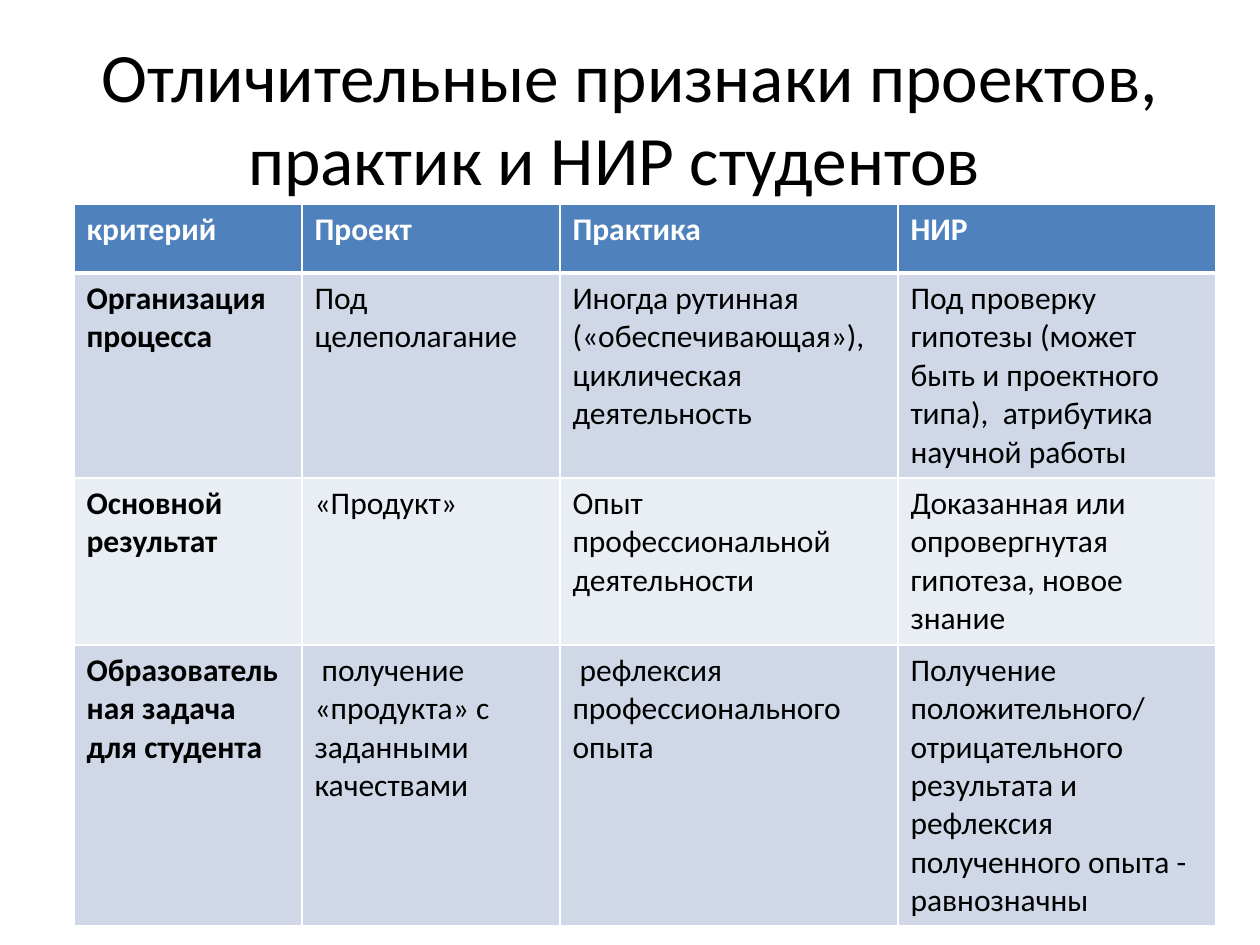
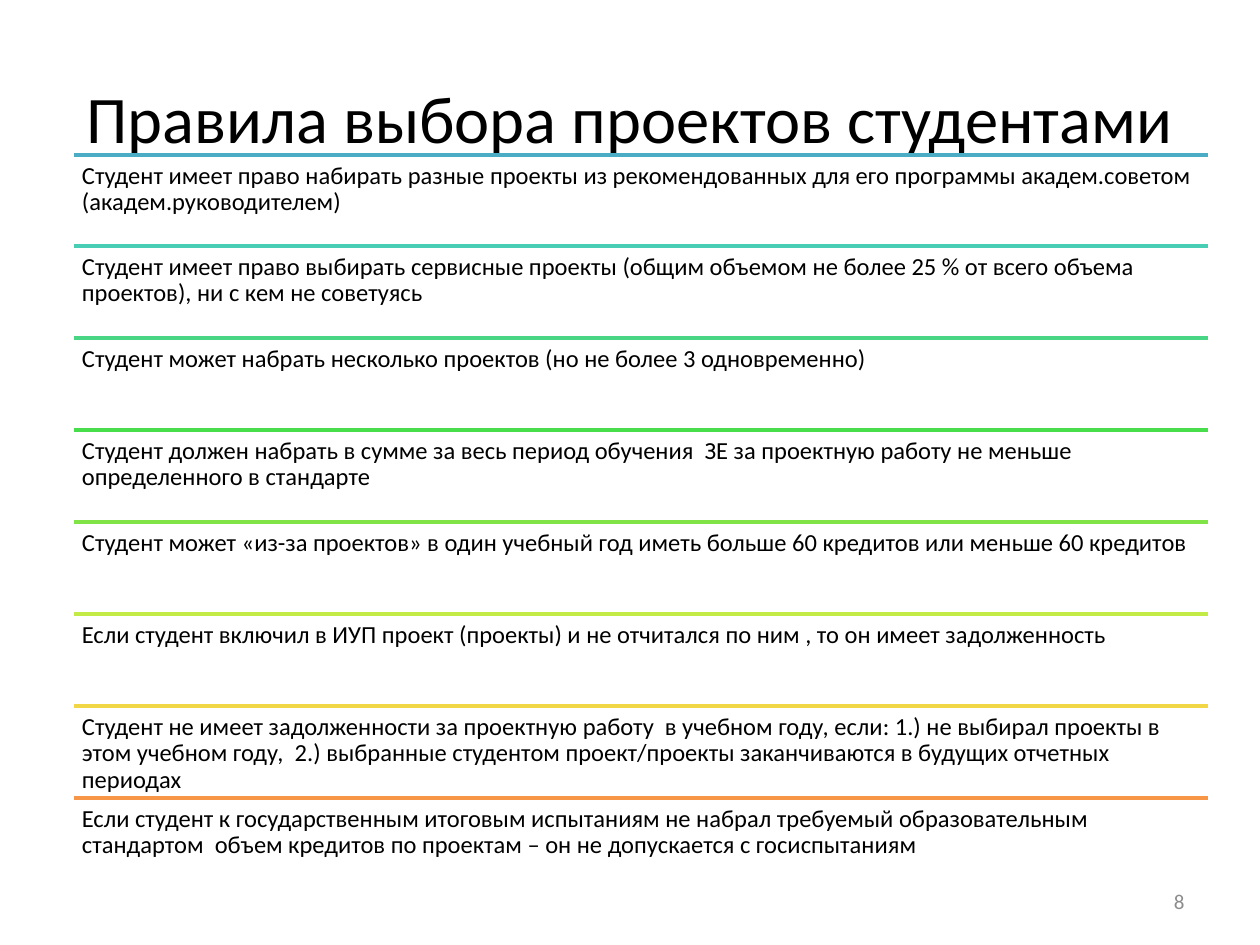
from dataclasses import dataclass

from lxml.etree import SubElement
from pptx import Presentation
from pptx.dml.color import RGBColor
from pptx.enum.shapes import MSO_CONNECTOR
from pptx.enum.text import MSO_ANCHOR, PP_ALIGN
from pptx.oxml.ns import qn
from pptx.util import Emu, Pt

PX = 914400 / 126
FONT = "Calibri"
COLORS = {
    "text": "000000",
    "white": "FFFFFF",
    "number": "8C8C8C",
    "header": "4F81BD",
    "band_dark": "D0D8E8",
    "band_light": "E9EDF4",
    "blue": "4BACC6",
    "teal": "49CEB6",
    "mint": "48D684",
    "green": "47DD4B",
    "lime": "80E446",
    "chartreuse": "C3EB46",
    "yellow": "F1D746",
    "orange": "F79646",
}


@dataclass(frozen=True)
class Area:
    left: int
    top: int
    width: int
    height: int

    def emu(self) -> tuple:
        return tuple(px(v) for v in (self.left, self.top, self.width, self.height))


@dataclass(frozen=True)
class TextStyle:
    size: float
    color: str = "text"
    bold: bool = False
    align: PP_ALIGN = PP_ALIGN.LEFT
    anchor: MSO_ANCHOR = MSO_ANCHOR.TOP
    line_spacing: float = 1.0
    space_after: float = 0


@dataclass(frozen=True)
class Rule:
    color: str
    text: str


def px(value: int) -> Emu:
    return Emu(round(value * PX))


def rgb(name: str) -> RGBColor:
    return RGBColor.from_string(COLORS[name])


# Shared geometry and styles
TITLE_AREA = Area(63, 38, 1134, 157)
NUMBER_AREA = Area(903, 876, 294, 50)
NUMBER_STYLE = TextStyle(12, "number", align=PP_ALIGN.RIGHT, anchor=MSO_ANCHOR.MIDDLE)
RULE_STYLE = TextStyle(14, line_spacing=0.9, space_after=5)
CONTENT_LEFT = 74

# Comparison table
TABLE_TOP = 204
COLUMN_WIDTHS = [228, 258, 338, 318]
ROW_HEIGHTS = [69, 205, 167, 281]
COMPARISON = [
    ["критерий", "Проект", "Практика", "НИР"],
    [
        "Организация процесса",
        "Под целеполагание",
        "Иногда рутинная («обеспечивающая»), циклическая деятельность",
        "Под проверку гипотезы (может быть и проектного типа),  атрибутика научной работы",
    ],
    [
        "Основной результат",
        "«Продукт»",
        "Опыт профессиональной деятельности",
        "Доказанная или опровергнутая гипотеза, новое знание",
    ],
    [
        "Образовательная задача для студента",
        " получение «продукта» с заданными качествами",
        " рефлексия профессионального опыта",
        "Получение положительного/ отрицательного результата и рефлексия "
        "полученного опыта - равнозначны",
    ],
]

# Project choice rules
RULES_TOP = 155
RULES_SPAN = 643
RULE_WIDTH = 1134
RULE_HEIGHT = 92
RULE_INSET = 8
RULES = [
    Rule("blue", "Студент имеет право набирать разные проекты из рекомендованных для его "
                 "программы академ.советом (академ.руководителем)"),
    Rule("teal", "Студент имеет право выбирать сервисные проекты (общим объемом не более "
                 "25 % от всего объема проектов), ни с кем не советуясь"),
    Rule("mint", "Студент может набрать несколько проектов (но не более 3 одновременно)"),
    Rule("green", "Студент должен набрать в сумме за весь период обучения  ЗЕ за проектную "
                  "работу не меньше определенного в стандарте"),
    Rule("lime", "Студент может «из-за проектов» в один учебный год иметь больше 60 кредитов "
                 "или меньше 60 кредитов"),
    Rule("chartreuse", "Если студент включил в ИУП проект (проекты) и не отчитался по ним , "
                       "то он имеет задолженность"),
    Rule("yellow", "Студент не имеет задолженности за проектную работу  в учебном году, если: "
                   "1.) не выбирал проекты в этом учебном году,  2.) выбранные студентом "
                   "проект/проекты заканчиваются в будущих отчетных периодах"),
    Rule("orange", "Если студент к государственным итоговым испытаниям не набрал требуемый "
                   "образовательным стандартом  объем кредитов по проектам – он не "
                   "допускается с госиспытаниям"),
]


def write(frame, text: str, style: TextStyle) -> None:
    frame.word_wrap = True
    para = frame.paragraphs[0]
    para.alignment = style.align
    para.line_spacing = style.line_spacing
    para.space_after = Pt(style.space_after)
    span = para.add_run()
    span.text = text
    span.font.name = FONT
    span.font.size = Pt(style.size)
    span.font.bold = style.bold
    span.font.color.rgb = rgb(style.color)


def add_text(page, area: Area, text: str, style: TextStyle, inset: int | None = None) -> None:
    frame = page.shapes.add_textbox(*area.emu()).text_frame
    frame.vertical_anchor = style.anchor
    if inset is not None:
        frame.margin_left = frame.margin_right = px(inset)
        frame.margin_top = frame.margin_bottom = px(inset)
    write(frame, text, style)


def add_title(page, text: str, size: float) -> None:
    style = TextStyle(size, align=PP_ALIGN.CENTER, anchor=MSO_ANCHOR.MIDDLE)
    add_text(page, TITLE_AREA, text, style)


def set_borders(cell, top: int, bottom: int) -> None:
    properties = cell._tc.get_or_add_tcPr()
    for side, width in (("L", 1), ("R", 1), ("T", top), ("B", bottom)):
        line = SubElement(properties, qn(f"a:ln{side}"), w=str(Pt(width)))
        fill = SubElement(line, qn("a:solidFill"))
        SubElement(fill, qn("a:srgbClr"), val=COLORS["white"])


def add_comparison(page) -> None:
    area = Area(CONTENT_LEFT, TABLE_TOP, sum(COLUMN_WIDTHS), sum(ROW_HEIGHTS))
    table = page.shapes.add_table(len(ROW_HEIGHTS), len(COLUMN_WIDTHS), *area.emu()).table
    for column, width in zip(table.columns, COLUMN_WIDTHS):
        column.width = px(width)
    for row, height in zip(table.rows, ROW_HEIGHTS):
        row.height = px(height)
    for r, texts in enumerate(COMPARISON):
        header = r == 0
        fill = "header" if header else "band_dark" if r % 2 else "band_light"
        for c, text in enumerate(texts):
            cell = table.cell(r, c)
            set_borders(cell, top=3 if r == 1 else 1, bottom=3 if header else 1)
            cell.fill.solid()
            cell.fill.fore_color.rgb = rgb(fill)
            style = TextStyle(18, "white" if header else "text", bold=header or c == 0)
            write(cell.text_frame, text, style)


def add_rule(page, rule: Rule, top: int) -> None:
    left, right = px(CONTENT_LEFT), px(CONTENT_LEFT + RULE_WIDTH)
    line = page.shapes.add_connector(MSO_CONNECTOR.STRAIGHT, left, px(top), right, px(top))
    line.line.color.rgb = rgb(rule.color)
    line.line.width = Pt(2)
    SubElement(line._element.spPr, qn("a:effectLst"))
    area = Area(CONTENT_LEFT, top, RULE_WIDTH, RULE_HEIGHT)
    add_text(page, area, rule.text, RULE_STYLE, RULE_INSET)


def main() -> None:
    deck = Presentation()
    deck.slide_width, deck.slide_height = px(1260), px(945)
    blank = deck.slide_layouts[6]

    # Slide 1: comparison of projects, practice and research
    page = deck.slides.add_slide(blank)
    add_title(page, "Отличительные признаки проектов, практик и НИР студентов  ", 39.6)
    add_comparison(page)

    # Slide 2: rules for choosing projects
    page = deck.slides.add_slide(blank)
    add_title(page, "Правила выбора проектов студентами", 38)
    for i, rule in enumerate(RULES):
        add_rule(page, rule, RULES_TOP + i * RULES_SPAN // (len(RULES) - 1))
    add_text(page, NUMBER_AREA, "8", NUMBER_STYLE)

    deck.save("out.pptx")


if __name__ == "__main__":
    main()
